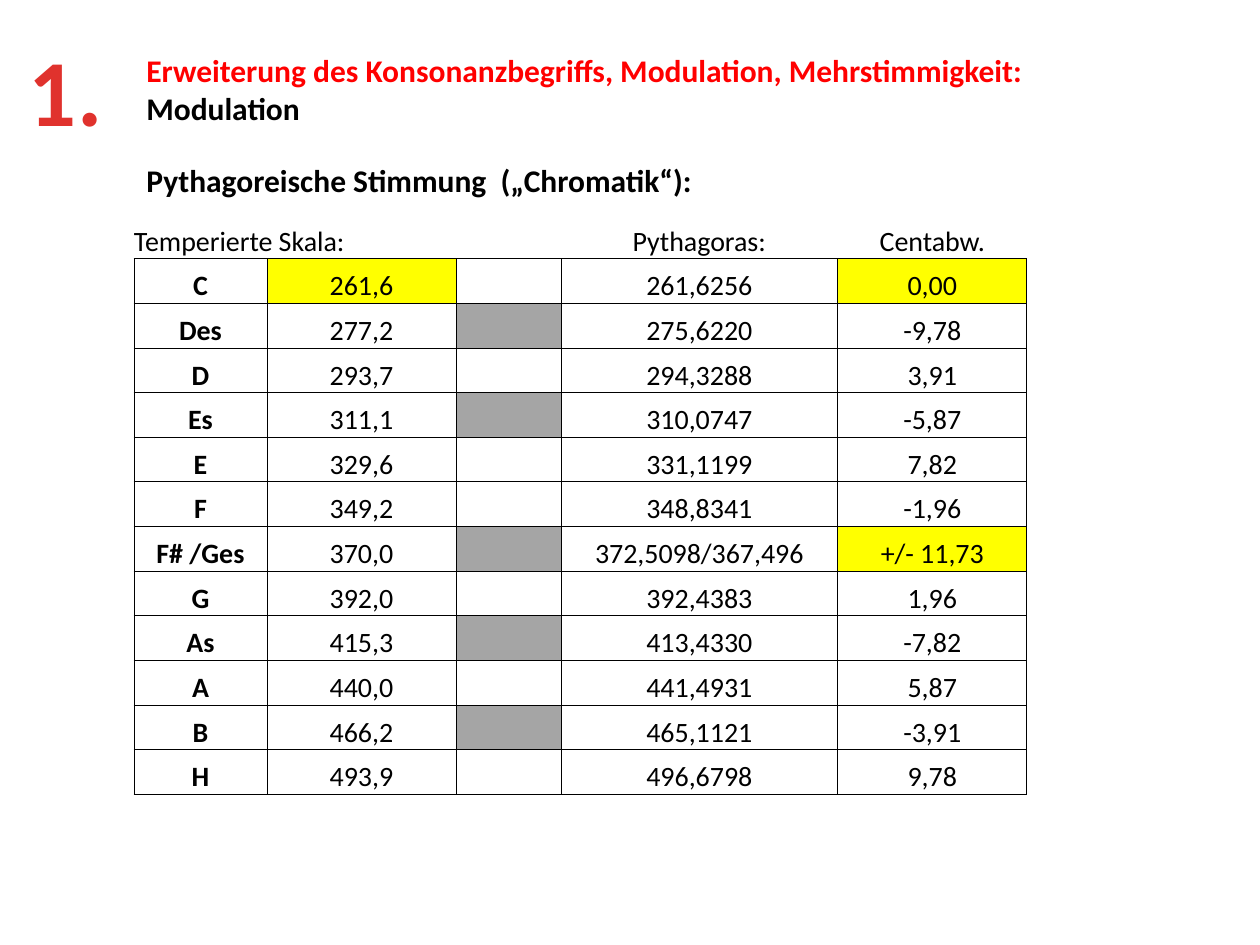
from lxml.etree import SubElement
from pptx import Presentation
from pptx.dml.color import RGBColor
from pptx.enum.text import MSO_ANCHOR as Anchor, MSO_AUTO_SIZE as AutoSize, PP_ALIGN as Align
from pptx.oxml.ns import qn
from pptx.util import Pt

PX = 914400 // 126
COLORS = {"black": "000000", "white": "FFFFFF", "red": "FF0000", "yellow": "FFFF00",
          "gray": "A5A5A5", "number_top": "E0322D", "number_bottom": "A2201C"}


def color(name):
    return RGBColor.from_string(COLORS[name])


def add_text(left, top, width, height, lines, size, align=Align.LEFT):
    box = slide.shapes.add_textbox(left * PX, top * PX, width * PX, height * PX)
    frame = box.text_frame
    frame.text = "\n".join(text for text, name in lines)
    frame.word_wrap = False
    frame.auto_size = AutoSize.SHAPE_TO_FIT_TEXT
    for paragraph, (text, name) in zip(frame.paragraphs, lines):
        paragraph.alignment = align
        font = paragraph.runs[0].font
        font.name, font.size, font.bold = "Calibri", Pt(size), True
        font.color.rgb = color(name)
    return box


presentation = Presentation()
presentation.slide_width = 1260 * PX
presentation.slide_height = 945 * PX
slide = presentation.slides.add_slide(presentation.slide_layouts[6])

rows = [
    ("Temperierte Skala:", "", "", "Pythagoras:", "Centabw."),
    ("C", "261,6", "", "261,6256", "0,00"),
    ("Des", "277,2", "", "275,6220", "-9,78"),
    ("D", "293,7", "", "294,3288", "3,91"),
    ("Es", "311,1", "", "310,0747", "-5,87"),
    ("E", "329,6", "", "331,1199", "7,82"),
    ("F", "349,2", "", "348,8341", "-1,96"),
    ("F# /Ges", "370,0", "", "372,5098/367,496", "+/- 11,73"),
    ("G", "392,0", "", "392,4383", "1,96"),
    ("As", "415,3", "", "413,4330", "-7,82"),
    ("A", "440,0", "", "441,4931", "5,87"),
    ("B", "466,2", "", "465,1121", "-3,91"),
    ("H", "493,9", "", "496,6798", "9,78"),
]
column_widths = [133, 189, 105, 277, 189]
black_keys = {"Des", "Es", "F# /Ges", "As", "B"}
highlighted = {"261,6", "0,00", "+/- 11,73"}

table_height = 581 * PX
table = slide.shapes.add_table(len(rows), len(column_widths), 134 * PX, 214 * PX,
                               sum(column_widths) * PX, table_height).table
table.first_row = False
table.horz_banding = False
for column, width in zip(table.columns, column_widths):
    column.width = width * PX
for row in table.rows:
    row.height = table_height // len(rows)

for r, values in enumerate(rows):
    for c, value in enumerate(values):
        cell = table.cell(r, c)
        cell.text = value
        cell.vertical_anchor = Anchor.BOTTOM
        cell.margin_left = cell.margin_right = cell.margin_top = cell.margin_bottom = 0
        paragraph = cell.text_frame.paragraphs[0]
        paragraph.alignment = Align.LEFT if r == 0 and c == 0 else Align.CENTER
        paragraph.font.size = Pt(16)
        for run in paragraph.runs:
            run.font.name, run.font.size = "Calibri", Pt(16)
            run.font.bold = r > 0 and c == 0
            run.font.color.rgb = color("black")
        properties = cell._tc.get_or_add_tcPr()
        for side in "LRTB":
            line = SubElement(properties, qn(f"a:ln{side}"), w=str(Pt(0.5)))
            if r > 0 or side == "B":
                fill = SubElement(line, qn("a:solidFill"))
                SubElement(fill, qn("a:srgbClr"), val=COLORS["black"])
            else:
                SubElement(line, qn("a:noFill"))
        if r == 0:
            cell.fill.background()
        else:
            cell.fill.solid()
            is_black_key = c == 2 and values[0] in black_keys
            name = "gray" if is_black_key else "yellow" if value in highlighted else "white"
            cell.fill.fore_color.rgb = color(name)
table.cell(0, 0).merge(table.cell(0, 1))

title = add_text(134, 45, 910, 89, [
    ("Erweiterung des Konsonanzbegriffs, Modulation, Mehrstimmigkeit:", "red"),
    ("Modulation", "black")], 18)
title.fill.solid()
title.fill.fore_color.rgb = color("white")

add_text(134, 155, 585, 50, [("Pythagoreische Stimmung  („Chromatik“):", "black")], 18)

number = add_text(15, 26, 101, 127, [("1.", "number_top")], 54, Align.CENTER)
number_font = number.text_frame.paragraphs[0].runs[0].font
number_font._rPr.set("spc", "50")
number_font.fill.gradient()
number_font.fill.gradient_angle = 270
stops = [(0.25, "number_top"), (1, "number_bottom")]
for stop, (position, name) in zip(number_font.fill.gradient_stops, stops):
    stop.position = position
    stop.color.rgb = color(name)

presentation.save("out.pptx")
